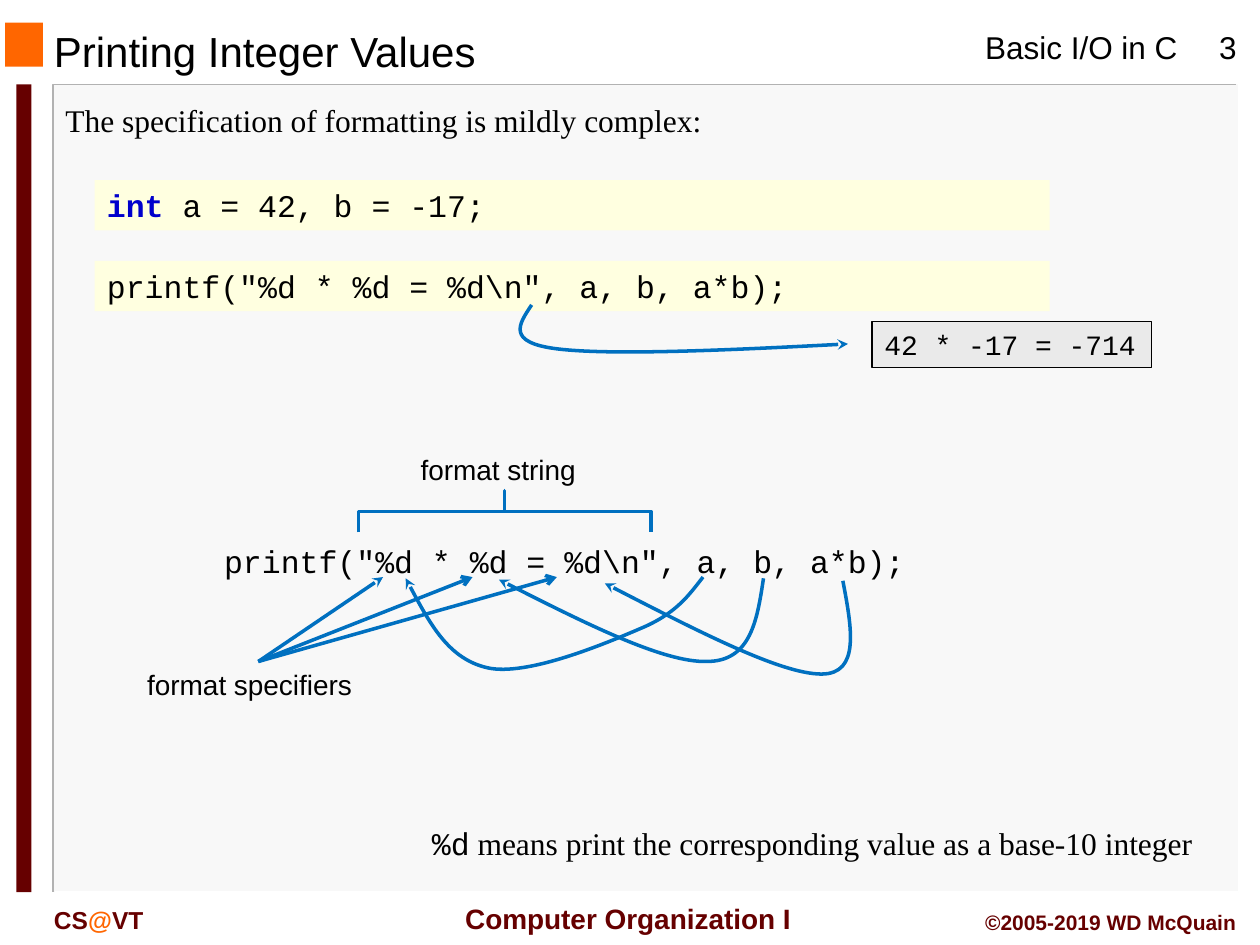
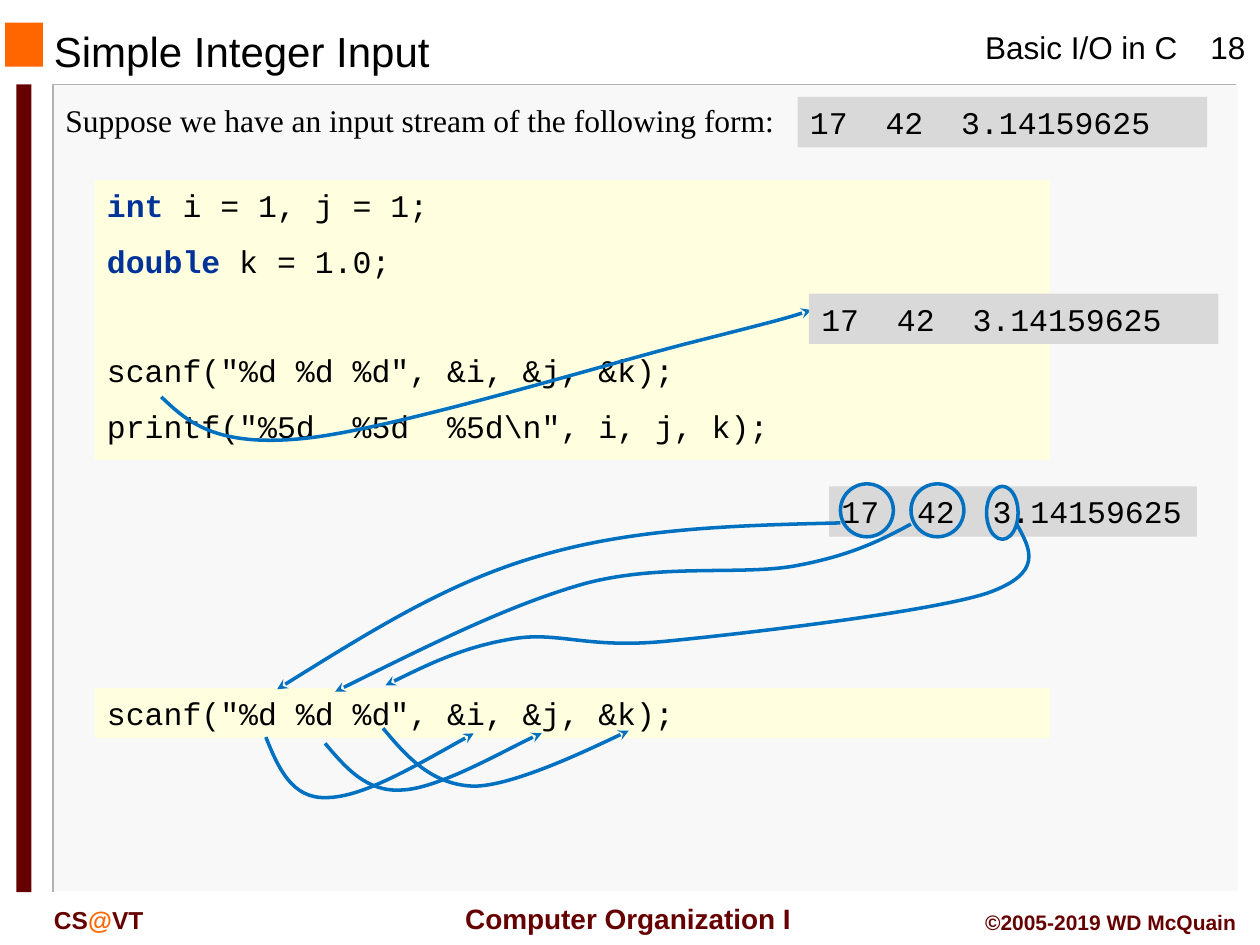
from lxml import etree
from pptx import Presentation
from pptx.dml.color import RGBColor
from pptx.enum.shapes import MSO_CONNECTOR, MSO_SHAPE
from pptx.enum.text import PP_ALIGN
from pptx.oxml.ns import qn
from pptx.util import Pt

PX = 9144
LEFT, CENTER, RIGHT = PP_ALIGN.LEFT, PP_ALIGN.CENTER, PP_ALIGN.RIGHT
RECTANGLE, OVAL, LEFT_BRACE = MSO_SHAPE.RECTANGLE, MSO_SHAPE.OVAL, MSO_SHAPE.LEFT_BRACE
STRAIGHT = MSO_CONNECTOR.STRAIGHT

BLACK = RGBColor(0x00, 0x00, 0x00)
WHITE = RGBColor(0xFF, 0xFF, 0xFF)
MAROON = RGBColor(0x66, 0x00, 0x00)
ORANGE = RGBColor(0xFF, 0x66, 0x00)
PANEL = RGBColor(0xF8, 0xF8, 0xF8)
PANEL_EDGE = RGBColor(0xB2, 0xB2, 0xB2)
CODE_FILL = RGBColor(0xFF, 0xFF, 0xE0)
OUTPUT_FILL = RGBColor(0xEA, 0xEA, 0xEA)
STREAM_FILL = RGBColor(0xD9, 0xD9, 0xD9)
BLUE = RGBColor(0x00, 0x70, 0xC0)
BRIGHT_KEYWORD = RGBColor(0x00, 0x00, 0xCC)
DARK_KEYWORD = RGBColor(0x00, 0x33, 0x99)

TITLE = ("Arial", 24, BLACK, False)
HEADER = ("Arial", 18, BLACK, False)
LABEL = ("Arial", 16, BLACK, False)
COURSE = ("Arial", 16, MAROON, True)
DEPARTMENT = ("Arial", 14, MAROON, True)
AT_SIGN = ("Arial", 14, ORANGE, True)
COPYRIGHT = ("Arial", 12, MAROON, True)
BODY = ("Times New Roman", 18, BLACK, False)
CODE = ("Courier New", 18, BLACK, False)
OUTPUT = ("Courier New", 16, BLACK, False)
PRINT_TYPE = ("Courier New", 18, BRIGHT_KEYWORD, True)
SCAN_TYPE = ("Courier New", 18, DARK_KEYWORD, True)

PRINTF_CALL = 'printf("%d * %d = %d\\n", a, b, a*b);'
SCANF_CALL = 'scanf("%d %d %d", &i, &j, &k);'
INPUT_STREAM = "17  42  3.14159625"


def add_text(slide, box, lines, align=LEFT, fill=None):
    shape = slide.shapes.add_textbox(*(v * PX for v in box))
    if fill is not None:
        shape.fill.solid()
        shape.fill.fore_color.rgb = fill
    frame = shape.text_frame
    frame.word_wrap = True
    for index, runs in enumerate(lines):
        paragraph = frame.add_paragraph() if index else frame.paragraphs[0]
        paragraph.alignment = align
        if index:
            paragraph.space_before = Pt(10.2)
        for text, (font, size, colour, bold) in runs:
            run = paragraph.add_run()
            run.text = text
            run.font.name = font
            run.font.size = Pt(size)
            run.font.color.rgb = colour
            run.font.bold = bold
    return shape


def set_stroke(shape, colour=BLUE, width=2, head=None):
    shape.line.color.rgb = colour
    shape.line.width = Pt(width)
    properties = shape._element.spPr
    if head:
        etree.SubElement(properties.find(qn("a:ln")), qn("a:tailEnd"), type=head)
    etree.SubElement(properties, qn("a:effectLst"))


deck = Presentation()
deck.slide_width = 1000 * PX
deck.slide_height = 750 * PX

slides = []
for title, number, intro in [
    ("Printing Integer Values", "3", "The specification of formatting is mildly complex:"),
    ("Simple Integer Input", "18", "Suppose we have an input stream of the following form:"),
]:
    slide = deck.slides.add_slide(deck.slide_layouts[6])
    slides.append(slide)
    for box, colour in [
        ((43, 67, 940, 641), PANEL),
        ((4, 18, 30, 35), ORANGE),
        ((13, 67, 12, 641), MAROON),
    ]:
        band = slide.shapes.add_shape(RECTANGLE, *(v * PX for v in box))
        band.shadow.inherit = False
        band.fill.solid()
        band.fill.fore_color.rgb = colour
        band.line.fill.background()
    for corner, colour in [
        ([(981, 67), (42, 67), (42, 708)], PANEL_EDGE),
        ([(983, 67), (983, 708), (44, 708)], WHITE),
    ]:
        builder = slide.shapes.build_freeform(*corner[0], scale=PX)
        builder.add_line_segments(corner[1:], close=False)
        edge = builder.convert_to_shape()
        edge.fill.background()
        set_stroke(edge, colour, 1)
    add_text(slide, (772, 17, 180, 40), [[("Basic I/O in C", HEADER)]])
    add_text(slide, (941, 17, 67, 40), [[(number, HEADER)]], CENTER)
    add_text(slide, (353, 711, 291, 37), [[("Computer Organization I", COURSE)]], CENTER)
    add_text(slide, (33, 713, 150, 33),
             [[("CS", DEPARTMENT), ("@", AT_SIGN), ("VT", DEPARTMENT)]])
    add_text(slide, (733, 717, 258, 30), [[("©2005-2019 WD McQuain", COPYRIGHT)]], RIGHT)
    add_text(slide, (33, 15, 633, 48), [[(title, TITLE)]])
    add_text(slide, (42, 75, 925, 40), [[(intro, BODY)]])

printing, scanning = slides

add_text(printing, (75, 143, 758, 40),
         [[("int ", PRINT_TYPE), ("a = 42, b = -17;", CODE)]], fill=CODE_FILL)
add_text(printing, (75, 207, 758, 40), [[(PRINTF_CALL, CODE)]], fill=CODE_FILL)
printed = add_text(printing, (692, 255, 222, 37), [[("42 * -17 = -714", OUTPUT)]],
                   fill=OUTPUT_FILL)
set_stroke(printed, BLACK, 0.75)
add_text(printing, (168, 425, 582, 40), [[(PRINTF_CALL, CODE)]])
add_text(printing, (324, 354, 153, 37), [[("format string", LABEL)]])
add_text(printing, (107, 525, 197, 37), [[("format specifiers", LABEL)]])
add_text(printing, (333, 649, 633, 40), [[
    ("%d", CODE),
    (" means print the corresponding value as a base-10 integer", BODY),
]])

format_brace = printing.shapes.add_shape(LEFT_BRACE, 384 * PX, 290 * PX, 33 * PX, 232 * PX)
format_brace.rotation = 90
format_brace.adjustments[0] = 0
format_brace.adjustments[1] = 0.5
format_brace.fill.background()
set_stroke(format_brace)

for specifier_x, head in [(304, "stealth"), (375, "arrow"), (442, "arrow")]:
    pointer = printing.shapes.add_connector(
        STRAIGHT, 205 * PX, 525 * PX, specifier_x * PX, 458 * PX)
    set_stroke(pointer, head=head)

add_text(scanning, (633, 77, 325, 40), [[(INPUT_STREAM, CODE)]], fill=STREAM_FILL)
program = add_text(scanning, (75, 143, 758, 222), [
    [("int ", SCAN_TYPE), ("i = 1, j = 1;", CODE)],
    [("double", SCAN_TYPE), (" k = 1.0;", CODE)],
    [(SCANF_CALL, CODE)],
    [('printf("%5d  %5d  %5d\\n", i, j, k);', CODE)],
], fill=CODE_FILL)
program.text_frame.paragraphs[2].space_before = Pt(40.8)
add_text(scanning, (658, 386, 292, 40), [[(INPUT_STREAM, CODE)]], fill=STREAM_FILL)
add_text(scanning, (75, 546, 758, 40), [[(SCANF_CALL, CODE)]], fill=CODE_FILL)

for box in [(667, 384, 42, 42), (723, 384, 42, 42), (783, 386, 25, 42)]:
    token_ring = scanning.shapes.add_shape(OVAL, *(v * PX for v in box))
    token_ring.fill.background()
    set_stroke(token_ring)

for slide, points in [
    (printing, [(422, 242), (412, 257), (401, 272), (443, 277),
                (485, 282), (579, 278), (673, 273)]),
    (printing, [(558, 458), (547, 472), (537, 487), (508, 499), (480, 511),
                (418, 537), (387, 530), (356, 523), (339, 491), (322, 459)]),
    (printing, [(606, 459), (601, 492), (596, 525), (561, 525),
                (527, 526), (461, 493), (396, 460)]),
    (printing, [(669, 461), (676, 498), (683, 535), (652, 535),
                (620, 535), (550, 499), (480, 463)]),
    (scanning, [(211, 585), (221, 610), (232, 634), (259, 633),
                (287, 633), (331, 607), (376, 582)]),
    (scanning, [(258, 590), (274, 609), (291, 629), (319, 627),
                (348, 626), (412, 589), (430, 582)]),
    (scanning, [(304, 578), (323, 601), (343, 623), (376, 624),
                (408, 624), (499, 580), (499, 580)]),
    (scanning, [(667, 415), (585, 417), (504, 419), (429, 441),
                (355, 462), (288, 505), (220, 547)]),
    (scanning, [(723, 416), (699, 429), (675, 441), (632, 449), (589, 457),
                (526, 447), (465, 463), (404, 480), (335, 515), (266, 549)]),
    (scanning, [(807, 416), (818, 436), (829, 455), (783, 471), (736, 486),
                (590, 503), (528, 509), (465, 515), (444, 501), (407, 507),
                (370, 513), (338, 528), (306, 544)]),
    (scanning, [(128, 315), (149, 335), (171, 355), (241, 348), (311, 341),
                (481, 289), (548, 272), (615, 255), (630, 251), (644, 246)]),
]:
    builder = slide.shapes.build_freeform(*points[0], scale=PX)
    builder.add_line_segments(points[1:], close=False)
    arrow = builder.convert_to_shape()
    arrow.fill.background()
    set_stroke(arrow, head="stealth")
    outline = arrow._element.find(".//" + qn("a:path"))
    segments = outline.findall(qn("a:lnTo"))
    for start in range(0, len(segments), 3):
        bezier = etree.SubElement(outline, qn("a:cubicBezTo"))
        for segment in segments[start:start + 3]:
            bezier.append(segment[0])
            outline.remove(segment)

add_text(scanning, (642, 233, 325, 40), [[(INPUT_STREAM, CODE)]], fill=STREAM_FILL)

deck.save("out.pptx")
